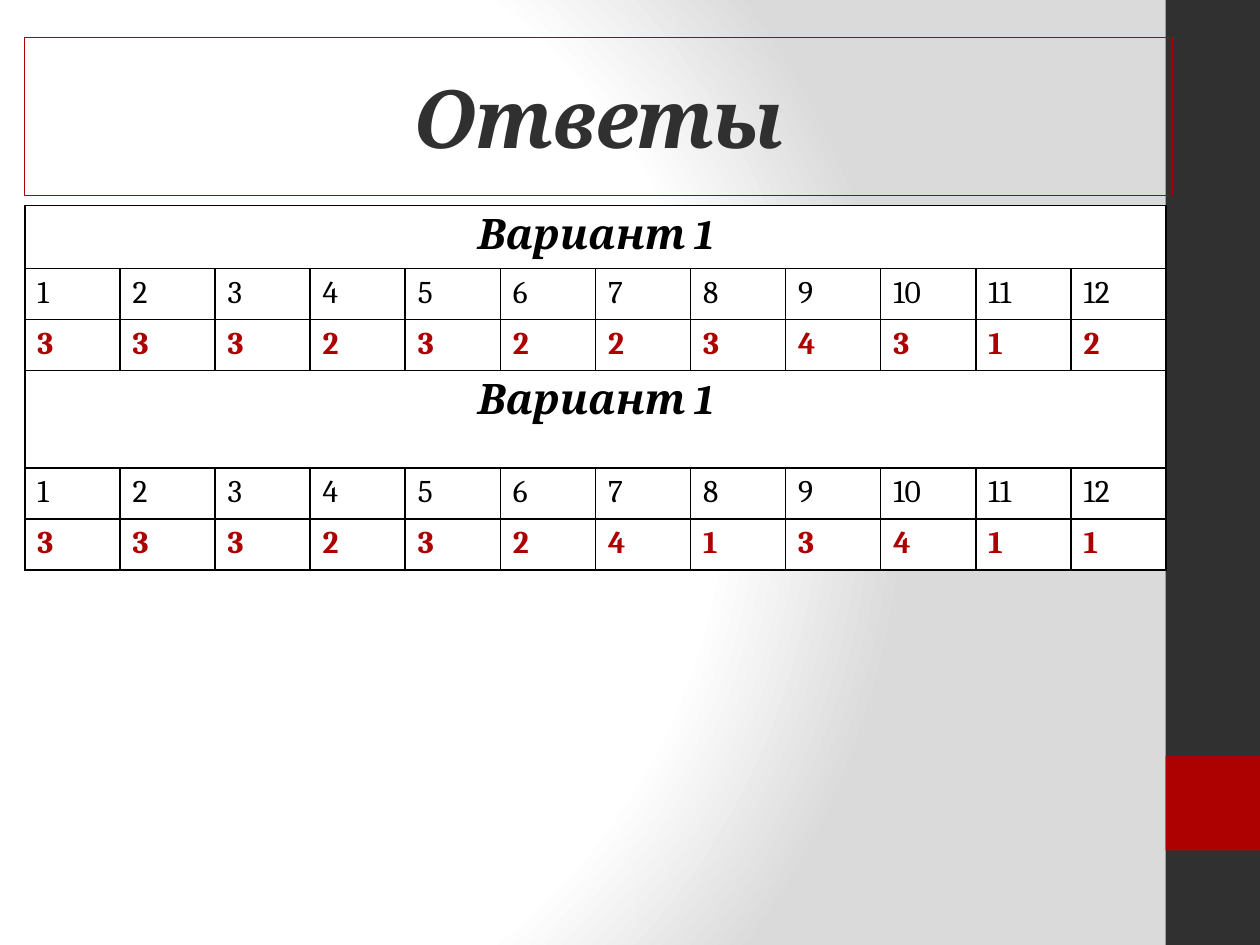
from pptx import Presentation
from pptx.dml.color import RGBColor
from pptx.enum.shapes import MSO_SHAPE
from pptx.enum.text import MSO_ANCHOR, PP_ALIGN
from pptx.oxml import parse_xml
from pptx.oxml.ns import nsdecls
from pptx.util import Pt

RECTANGLE = MSO_SHAPE.RECTANGLE
MIDDLE = MSO_ANCHOR.MIDDLE
CENTER, LEFT = PP_ALIGN.CENTER, PP_ALIGN.LEFT
FONT = "Cambria"
COLORS = {"dark": "303030", "red": "AD0101", "white": "FFFFFF",
          "gray": "DADADA", "black": "000000"}


def rgb(name):
    return RGBColor.from_string(COLORS[name])


def write(frame, text, size, color, align=LEFT, bold=False, italic=False):
    paragraph = frame.paragraphs[0]
    paragraph.alignment = align
    run = paragraph.add_run()
    run.text = text
    run.font.name = FONT
    run.font.size = Pt(size)
    run.font.bold = bold
    run.font.italic = italic
    run.font.color.rgb = rgb(color)
    return run


prs = Presentation()
prs.slide_width, prs.slide_height = Pt(720), Pt(540)
slide = prs.slides.add_slide(prs.slide_layouts[6])

stops = "".join(
    f'<a:gs pos="{position * 1000}"><a:srgbClr val="{COLORS[color]}"/></a:gs>'
    for position, color in [(0, "white"), (75, "white"), (100, "gray")])
slide.element.cSld.insert(0, parse_xml(
    f'<p:bg {nsdecls("p", "a")}><p:bgPr><a:gradFill rotWithShape="1">'
    f'<a:gsLst>{stops}</a:gsLst><a:path path="circle">'
    '<a:fillToRect l="20000" t="50000" r="100000" b="50000"/></a:path>'
    '</a:gradFill><a:effectLst/></p:bgPr></p:bg>'))

for top, height, color in [(0, 540, "dark"), (432, 54, "red")]:
    band = slide.shapes.add_shape(RECTANGLE, Pt(666), Pt(top), Pt(54), Pt(height))
    band.shadow.inherit = False
    band.fill.solid()
    band.fill.fore_color.rgb = rgb(color)
    band.line.fill.background()

heading = slide.shapes.add_textbox(Pt(14.2), Pt(21.6), Pt(656), Pt(90))
heading.line.color.rgb = rgb("red")
heading.line.width = Pt(0.75)
heading.text_frame.word_wrap = True
heading.text_frame.vertical_anchor = MIDDLE
title = write(heading.text_frame, "Ответы", 46, "dark", CENTER, True, True)
title.font._element.set("spc", "-100")

variants = [("Вариант 1", "333232234312"), ("Вариант 1", "333232413411")]
row_heights = [34.8, 29.15, 29.15, 55.7, 29.15, 29.15]
question_count = 12
answers = slide.shapes.add_table(
    len(row_heights), question_count, Pt(14.2), Pt(117.4),
    Pt(652.2), Pt(sum(row_heights))).table
answers.first_row = answers.horz_banding = False
for column in answers.columns:
    column.width = Pt(54.35)
for row, height in zip(answers.rows, row_heights):
    row.height = Pt(height)

for cell in answers.iter_cells():
    cell.fill.solid()
    cell.fill.fore_color.rgb = rgb("white")
    properties = cell._tc.get_or_add_tcPr()
    for index, side in enumerate(["lnL", "lnR", "lnT", "lnB"]):
        properties.insert(index, parse_xml(
            f'<a:{side} {nsdecls("a")} w="12700"><a:solidFill>'
            f'<a:srgbClr val="{COLORS["black"]}"/></a:solidFill></a:{side}>'))

for index, (variant, keys) in enumerate(variants):
    first = index * 3
    variant_cell = answers.cell(first, 0)
    variant_cell.merge(answers.cell(first, question_count - 1))
    write(variant_cell.text_frame, variant, 24, "black", CENTER, True, True)
    for column, key in enumerate(keys):
        write(answers.cell(first + 1, column).text_frame, str(column + 1), 18, "black")
        write(answers.cell(first + 2, column).text_frame, key, 18, "red", bold=True)

prs.save("out.pptx")
